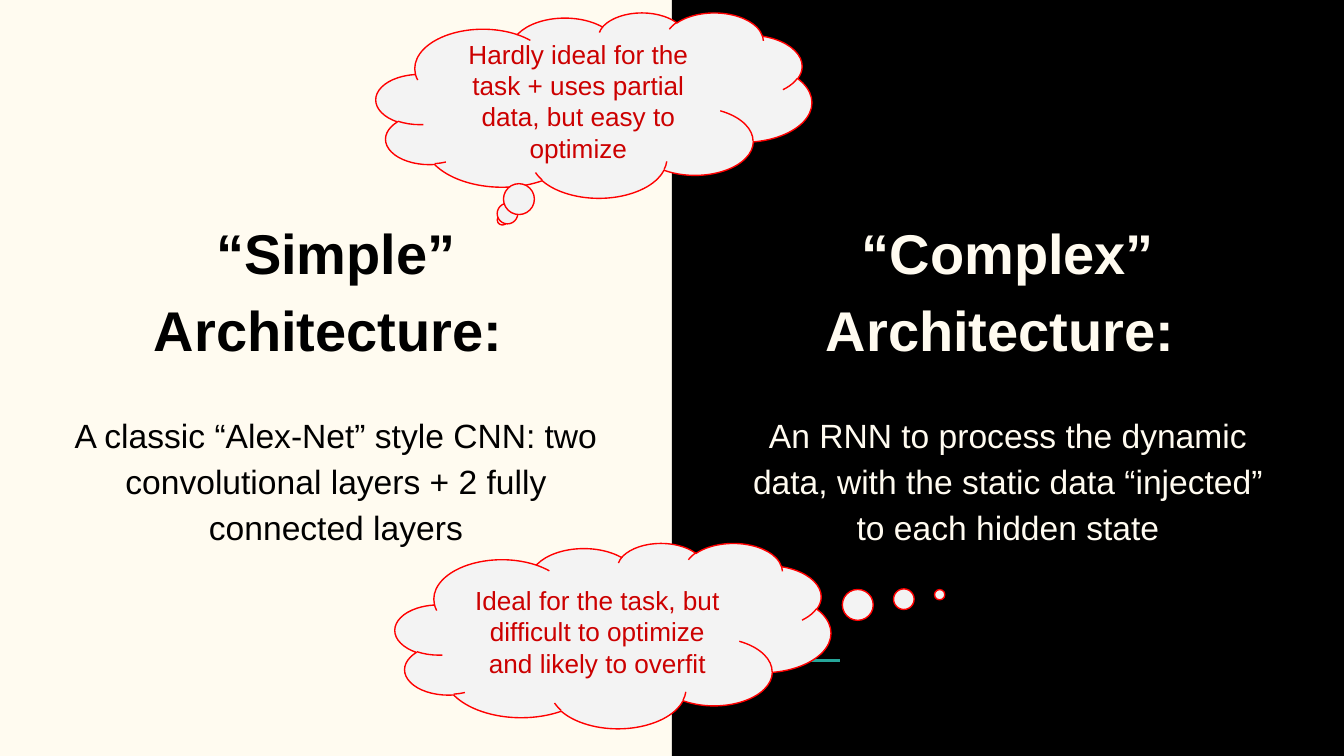
from dataclasses import dataclass

from lxml.etree import SubElement
from pptx import Presentation
from pptx.dml.color import RGBColor
from pptx.enum.shapes import MSO_CONNECTOR as Connector, MSO_SHAPE as Shape
from pptx.enum.text import MSO_ANCHOR as Anchor, PP_ALIGN as Align
from pptx.oxml.ns import qn
from pptx.util import Pt

COLOURS = {
    "cream": "FFFBF0",
    "black": "000000",
    "teal": "26A69A",
    "cloud": "F3F3F3",
    "outline": "FF0000",
    "remark": "CC0000",
}


@dataclass
class SlideBuilder:
    """Draws styled elements on the current slide."""

    slide: object
    font: str = "Arial"
    inset: float = 7.2

    def colour(self, name):
        return RGBColor.from_string(COLOURS[name])

    def background(self, colour):
        fill = self.slide.background.fill
        fill.solid()
        fill.fore_color.rgb = self.colour(colour)

    def shape(self, kind, box, fill, line=None):
        shape = self.slide.shapes.add_shape(kind, *map(Pt, box))
        shape.shadow.inherit = False
        shape.fill.solid()
        shape.fill.fore_color.rgb = self.colour(fill)
        if line:
            shape.line.color.rgb = self.colour(line)
            shape.line.width = Pt(0.75)
        else:
            shape.line.fill.background()
        return shape

    def line(self, start, end, colour, width):
        points = map(Pt, (*start, *end))
        connector = self.slide.shapes.add_connector(Connector.STRAIGHT, *points)
        connector.line.color.rgb = self.colour(colour)
        connector.line.width = Pt(width)
        SubElement(connector._element.spPr, qn("a:effectLst"))

    def frame(self, shape):
        frame = shape.text_frame
        frame.word_wrap = True
        frame.vertical_anchor = Anchor.MIDDLE
        frame.margin_left = frame.margin_right = Pt(self.inset)
        frame.margin_top = frame.margin_bottom = Pt(self.inset)
        return frame

    def paragraph(self, paragraph, text, size, colour, bold=False):
        paragraph.text = text
        paragraph.alignment = Align.CENTER
        for run in paragraph.runs:
            run.font.name = self.font
            run.font.size = Pt(size)
            run.font.bold = bold
            run.font.color.rgb = self.colour(colour)

    def column(self, left, heading, body, colour):
        box = self.slide.shapes.add_textbox(Pt(left), Pt(57), Pt(302.4), Pt(290.8))
        frame = self.frame(box)
        styles = ((heading, 30, True, 24.5), (body, 18, False, 16))
        for index, (text, size, bold, gap) in enumerate(styles):
            paragraph = frame.add_paragraph() if index else frame.paragraphs[0]
            self.paragraph(paragraph, text, size, colour, bold)
            paragraph.line_spacing = 1.15
            paragraph.space_after = Pt(gap)

    def cloud(self, left, top, tail, text):
        box = (left, top, 233.4, 99.3)
        shape = self.shape(Shape.CLOUD_CALLOUT, box, "cloud", "outline")
        shape.adjustments[0], shape.adjustments[1] = tail
        frame = self.frame(shape)
        self.paragraph(frame.paragraphs[0], text, 14, "remark")


def main():
    presentation = Presentation()
    presentation.slide_width, presentation.slide_height = Pt(720), Pt(405)
    builder = SlideBuilder(presentation.slides.add_slide(presentation.slide_layouts[6]))

    builder.background("cream")
    builder.shape(Shape.RECTANGLE, (360, 0, 360, 405), "black")
    builder.line((396, 354), (450, 354), "teal", 1.5)
    builder.column(
        388.8,
        "“Complex” Architecture: ",
        "An RNN to process the dynamic data, with the static data “injected” to each hidden state",
        "cream",
    )
    builder.column(
        28.8,
        "“Simple” Architecture: ",
        "A classic “Alex-Net” style CNN: two convolutional layers + 2 fully connected layers",
        "black",
    )
    builder.cloud(
        201.5, 6.6, (-0.21, 0.62),
        "Hardly ideal for the task + uses partial data, but easy to optimize",
    )
    builder.cloud(
        211.7, 290.8, (0.75, -0.22),
        "Ideal for the task, but difficult to optimize and likely to overfit",
    )
    presentation.save("out.pptx")


if __name__ == "__main__":
    main()
